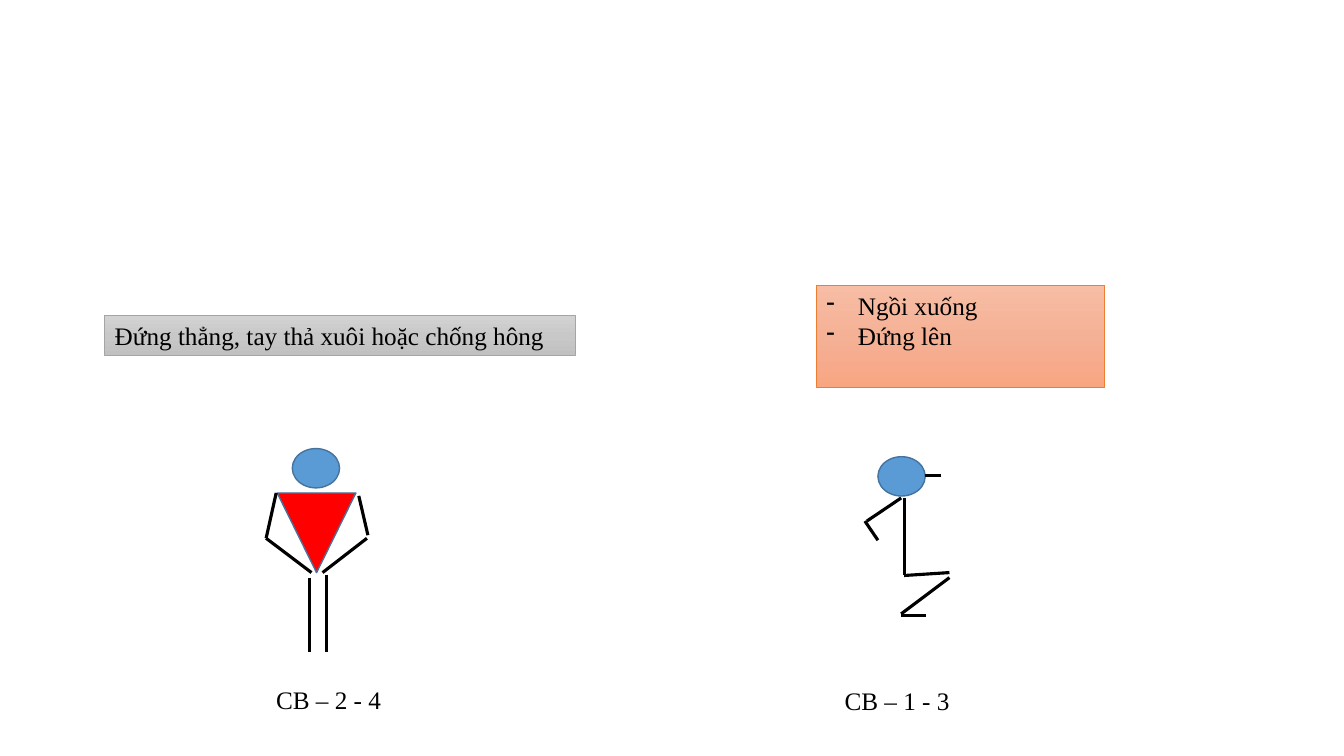
from copy import deepcopy

from pptx import Presentation, util as u
from pptx.dml import color
from pptx.enum import shapes, text
from pptx.oxml import ns, xmlchemy

BLACK = "000000"
GREY_BOX = ("D2D2D2", "C8C8C8", "C0C0C0")
ORANGE_BOX = ("F7BDA5", "F5B196", "F8A582")

STANDING_LIMBS = [
    (197.3, 352.1, 190.1, 384.5),
    (190.1, 384.5, 222.5, 409),
    (256.3, 354.2, 262.8, 382.3),
    (262.1, 384.5, 230.4, 409),
    (221, 412.6, 221, 465.8),
    (233.3, 410.4, 233.3, 465.8),
]
SITTING_LIMBS = [
    (645.8, 355.7, 645.8, 410.4),
    (643.7, 355.7, 619.2, 372.2),
    (617.8, 372.2, 627.1, 385.9),
    (678.2, 409, 645.8, 411.1),
    (678.2, 412.6, 643.7, 438.5),
    (643.7, 439.9, 661.7, 439.9),
    (672.5, 339.8, 661, 339.8),
]


def rgb(value):
    return color.RGBColor.from_string(value)


def add_dash(para, indent):
    props = para._p.get_or_add_pPr()
    props.set("marL", str(u.Pt(indent)))
    props.set("indent", str(-u.Pt(indent)))
    bullet = xmlchemy.OxmlElement("a:buChar")
    bullet.set("char", "-")
    props.append(bullet)


def write(frame, lines, font="Times New Roman", size=18, ink=BLACK, dashed=False):
    frame.word_wrap = True
    frame.auto_size = text.MSO_AUTO_SIZE.NONE
    frame.vertical_anchor = text.MSO_ANCHOR.TOP
    for index, line in enumerate(lines):
        para = frame.add_paragraph() if index else frame.paragraphs[0]
        para.alignment = text.PP_ALIGN.LEFT
        if dashed:
            add_dash(para, 22.5)
        span = para.add_run()
        span.text = line
        span.font.name = font
        span.font.size = u.Pt(size)
        span.font.color.rgb = rgb(ink)


class Sketch:
    head_fill = "5B9BD5"
    outline = "43739E"
    limb_width = 2.25

    def __init__(self, page):
        self.page = page

    def shape(self, kind, place, line, width):
        item = self.page.shapes.add_shape(kind, *map(u.Pt, place))
        item.shadow.inherit = False
        item.line.color.rgb = rgb(line)
        item.line.width = u.Pt(width)
        return item

    def body_part(self, kind, place, fill):
        part = self.shape(kind, place, self.outline, 1)
        part.fill.solid()
        part.fill.fore_color.rgb = rgb(fill)
        return part

    def head(self, left, top):
        self.body_part(shapes.MSO_SHAPE.OVAL, (left, top, 33.8, 28.1), self.head_fill)

    def torso(self, place):
        part = self.body_part(shapes.MSO_SHAPE.ISOSCELES_TRIANGLE, place, "FF0000")
        part.rotation = 180

    def limbs(self, segments):
        for ends in segments:
            limb = self.page.shapes.add_connector(
                shapes.MSO_CONNECTOR.STRAIGHT, *map(u.Pt, ends))
            limb.line.color.rgb = rgb(BLACK)
            limb.line.width = u.Pt(self.limb_width)
            limb._element.spPr.append(xmlchemy.OxmlElement("a:effectLst"))

    def instruction(self, place, lines, shades, line, dashed=False):
        box = self.shape(shapes.MSO_SHAPE.RECTANGLE, place, line, 0.5)
        box.fill.gradient()
        box.fill.gradient_angle = 270
        stop_list = box._element.spPr.find(".//" + ns.qn("a:gsLst"))
        stop_list.append(deepcopy(stop_list[0]))
        for index, (stop, shade) in enumerate(zip(box.fill.gradient_stops, shades)):
            stop.position = index / 2
            stop.color.rgb = rgb(shade)
        write(box.text_frame, lines, dashed=dashed)

    def caption(self, left, top, words):
        box = self.page.shapes.add_textbox(*map(u.Pt, (left, top, 97.2, 28.8)))
        write(box.text_frame, [words])


def main():
    deck = Presentation()
    deck.slide_width, deck.slide_height = u.Pt(960), u.Pt(540)
    sketch = Sketch(deck.slides.add_slide(deck.slide_layouts[6]))

    sketch.instruction((74.9, 225.4, 336.2, 28.8),
                       ["Đứng thẳng, tay thả xuôi hoặc chống hông"],
                       GREY_BOX, "A5A5A5")
    sketch.head(208.8, 320.4)
    sketch.torso((198, 352.1, 56.2, 56.9))
    sketch.limbs(STANDING_LIMBS)
    sketch.caption(190.1, 485.3, "CB – 2 - 4")

    sketch.instruction((583.2, 203.8, 205.9, 72.7), ["Ngồi xuống", "Đứng lên"],
                       ORANGE_BOX, "ED7D31", dashed=True)
    sketch.head(627.1, 326.2)
    sketch.limbs(SITTING_LIMBS)
    sketch.caption(596.2, 486, "CB – 1 - 3")

    deck.save("out.pptx")


if __name__ == "__main__":
    main()
